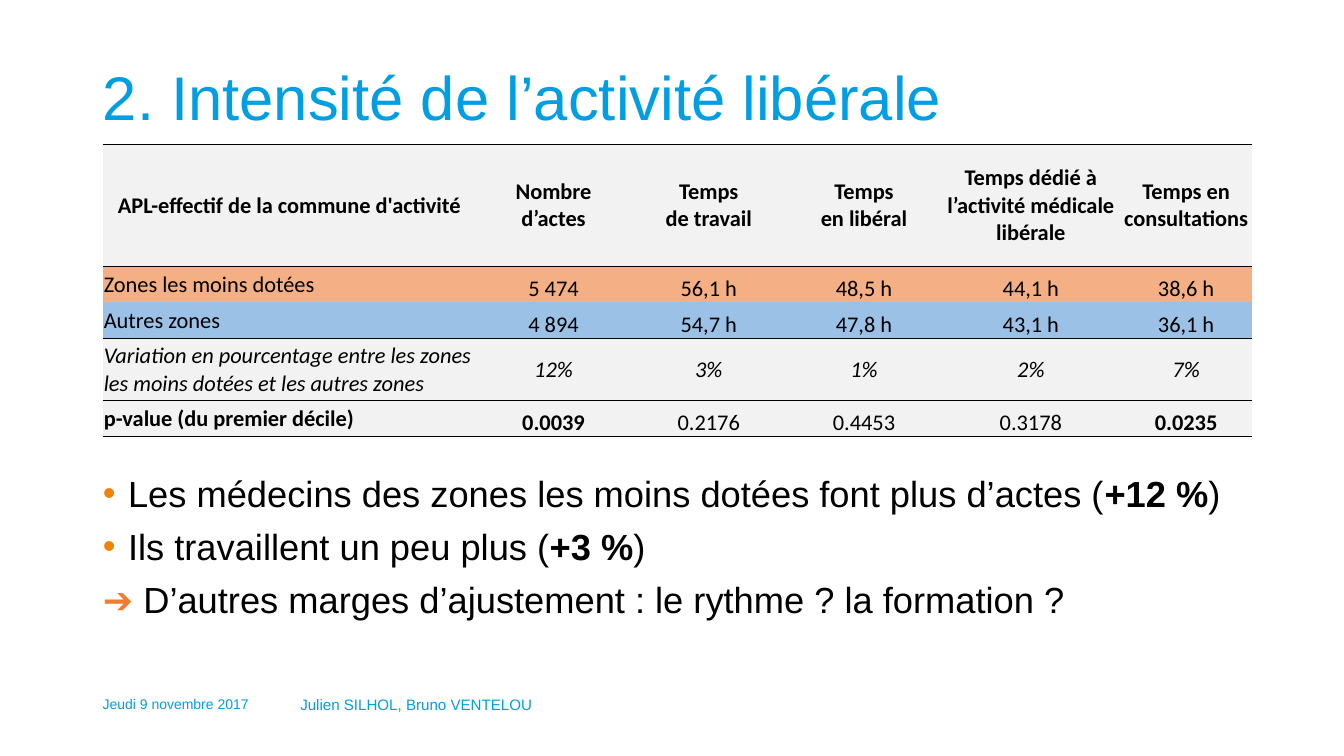
import pptx
import pptx.util
import pptx.dml.color
import pptx.enum.text
import pptx.oxml
import pptx.oxml.ns

PX = 9144
BLUE, ORANGE, BLACK = "009FE3", "ED7D31", "000000"
GREY, SALMON, SKY = "F2F2F2", "F4B084", "9BC2E6"
ALIGN = pptx.enum.text.PP_ALIGN
ANCHOR = pptx.enum.text.MSO_ANCHOR
LEFT, CENTER, JUSTIFY = ALIGN.LEFT, ALIGN.CENTER, ALIGN.JUSTIFY
MIDDLE, BOTTOM, TOP = ANCHOR.MIDDLE, ANCHOR.BOTTOM, ANCHOR.TOP

COLUMNS = [370, 154, 154, 154, 177, 131]
ROWS = [
    dict(height=121, fill=GREY, edges="TB", anchor=MIDDLE, bold=range(6), italic=False,
         cells=["APL-effectif de la commune d'activité", "Nombre\nd’actes", "Temps\nde travail",
                "Temps\nen libéral", "Temps dédié à l’activité médicale libérale",
                "Temps en consultations"]),
    dict(height=36, fill=SALMON, edges="T", anchor=BOTTOM, bold=[], italic=False,
         cells=["Zones les moins dotées", "5 474", "56,1 h", "48,5 h", "44,1 h", "38,6 h"]),
    dict(height=36, fill=SKY, edges="B", anchor=BOTTOM, bold=[], italic=False,
         cells=["Autres zones", "4 894", "54,7 h", "47,8 h", "43,1 h", "36,1 h"]),
    dict(height=61, fill=GREY, edges="TB", anchor=MIDDLE, bold=[], italic=True,
         cells=["Variation en pourcentage entre les zones les moins dotées et les autres zones",
                "12%", "3%", "1%", "2%", "7%"]),
    dict(height=36, fill=GREY, edges="TB", anchor=BOTTOM, bold=[0, 1, 5], italic=False,
         cells=["p-value (du premier décile)", "0.0039", "0.2176", "0.4453", "0.3178", "0.0235"]),
]
POINTS = [
    ("•", [("Les médecins des zones les moins dotées font plus d’actes (", BLACK, False),
           ("+12 %", BLACK, True), (")", BLACK, False)]),
    ("•", [("Ils travaillent un peu plus (", BLACK, False),
           ("+3 %", BLACK, True), (")", BLACK, False)]),
    (None, [("➔", ORANGE, False),
            (" D’autres marges d’ajustement : le rythme ? la formation ?", BLACK, False)]),
]


def rgb(value):
    return pptx.dml.color.RGBColor.from_string(value)


def apply(target, values):
    for name, value in values.items():
        setattr(target, name, value)


def set_font(font, size, color, name="Arial", bold=False, italic=False):
    apply(font, dict(size=pptx.util.Pt(size), name=name, bold=bold, italic=italic))
    font.color.rgb = rgb(color)


def add_xml(parent, xml):
    head, tail = xml.split(" ", 1)
    parent.append(pptx.oxml.parse_xml(f"{head} {pptx.oxml.ns.nsdecls('a')} {tail}"))


def place(sp, left, top, width, height, anchor):
    apply(sp, dict(left=left * PX, top=top * PX, width=width * PX, height=height * PX))
    apply(sp.text_frame, dict(word_wrap=True, vertical_anchor=anchor,
                              auto_size=pptx.enum.text.MSO_AUTO_SIZE.NONE))


def fill_line(sp, text, size, spacing):
    p = sp.text_frame.paragraphs[0]
    apply(p, dict(alignment=LEFT, line_spacing=spacing))
    r = p.add_run()
    r.text = text
    set_font(r.font, size, BLUE)


def add_label(s, text, box, size, spacing):
    sp = s.shapes.add_textbox(0, 0, PX, PX)
    place(sp, *box, MIDDLE)
    fill_line(sp, text, size, spacing)


def set_bullet(p, bullet):
    pPr = p._p.get_or_add_pPr()
    indent = 25 * PX if bullet else 0
    pPr.set("marL", str(indent))
    pPr.set("indent", str(-indent))
    if bullet:
        add_xml(pPr, '<a:buClr ><a:srgbClr val="F08300"/></a:buClr>')
        add_xml(pPr, '<a:buFont typeface="Arial"/>')
        add_xml(pPr, f'<a:buChar char="{bullet}"/>')
    else:
        add_xml(pPr, "<a:buNone />")


def fill_points(sp):
    tf = sp.text_frame
    for i, (bullet, runs) in enumerate(POINTS):
        p = tf.add_paragraph() if i else tf.paragraphs[0]
        apply(p, dict(alignment=JUSTIFY, line_spacing=0.9,
                      space_before=pptx.util.Pt(10 if i else 0)))
        set_bullet(p, bullet)
        for text, color, bold in runs:
            r = p.add_run()
            r.text = text
            set_font(r.font, 25.9, color, bold=bold)


def set_borders(cell, edges):
    tcPr = cell._tc.get_or_add_tcPr()
    for side in "LRTB":
        if side in edges:
            add_xml(tcPr, f'<a:ln{side} w="6350"><a:solidFill><a:srgbClr val="{BLACK}"/>'
                          f'</a:solidFill></a:ln{side}>')
        else:
            add_xml(tcPr, f'<a:ln{side} w="0"><a:noFill/></a:ln{side}>')


def fill_cell(cell, text, row, column):
    apply(cell, dict(margin_left=PX, margin_right=PX, margin_top=PX, margin_bottom=0,
                     vertical_anchor=row["anchor"] if column else MIDDLE))
    set_borders(cell, row["edges"])
    cell.fill.solid()
    cell.fill.fore_color.rgb = rgb(row["fill"])
    cell.text_frame.text = text
    for p in cell.text_frame.paragraphs:
        p.alignment = CENTER if column or row is ROWS[0] else LEFT
        for r in p.runs:
            set_font(r.font, 16, BLACK, "Calibri", column in row["bold"], row["italic"])


def add_activity_table(s, left, top):
    height = sum(row["height"] for row in ROWS)
    table = s.shapes.add_table(len(ROWS), len(COLUMNS), left * PX, top * PX,
                               sum(COLUMNS) * PX, height * PX).table
    apply(table, dict(first_row=False, horz_banding=False))
    for column, width in zip(table.columns, COLUMNS):
        column.width = width * PX
    for i, row in enumerate(ROWS):
        table.rows[i].height = row["height"] * PX
        for j, text in enumerate(row["cells"]):
            fill_cell(table.cell(i, j), text, row, j)


def main():
    prs = pptx.Presentation()
    apply(prs, dict(slide_width=1333 * PX, slide_height=750 * PX))
    s = prs.slides.add_slide(prs.slide_layouts[1])
    title, body = s.placeholders
    place(title, 92, 40, 1150, 120, MIDDLE)
    fill_line(title, "2. Intensité de l’activité libérale", 44, 0.9)
    place(body, 92, 467, 1185, 172, TOP)
    fill_points(body)
    add_label(s, "Jeudi 9 novembre 2017", (92, 678, 192, 43), 10, 0.9)
    add_label(s, "Julien SILHOL, Bruno VENTELOU", (288, 682, 264, 38), 10.8, 0.7)
    add_activity_table(s, 102, 143)
    prs.save("out.pptx")


if __name__ == "__main__":
    main()
